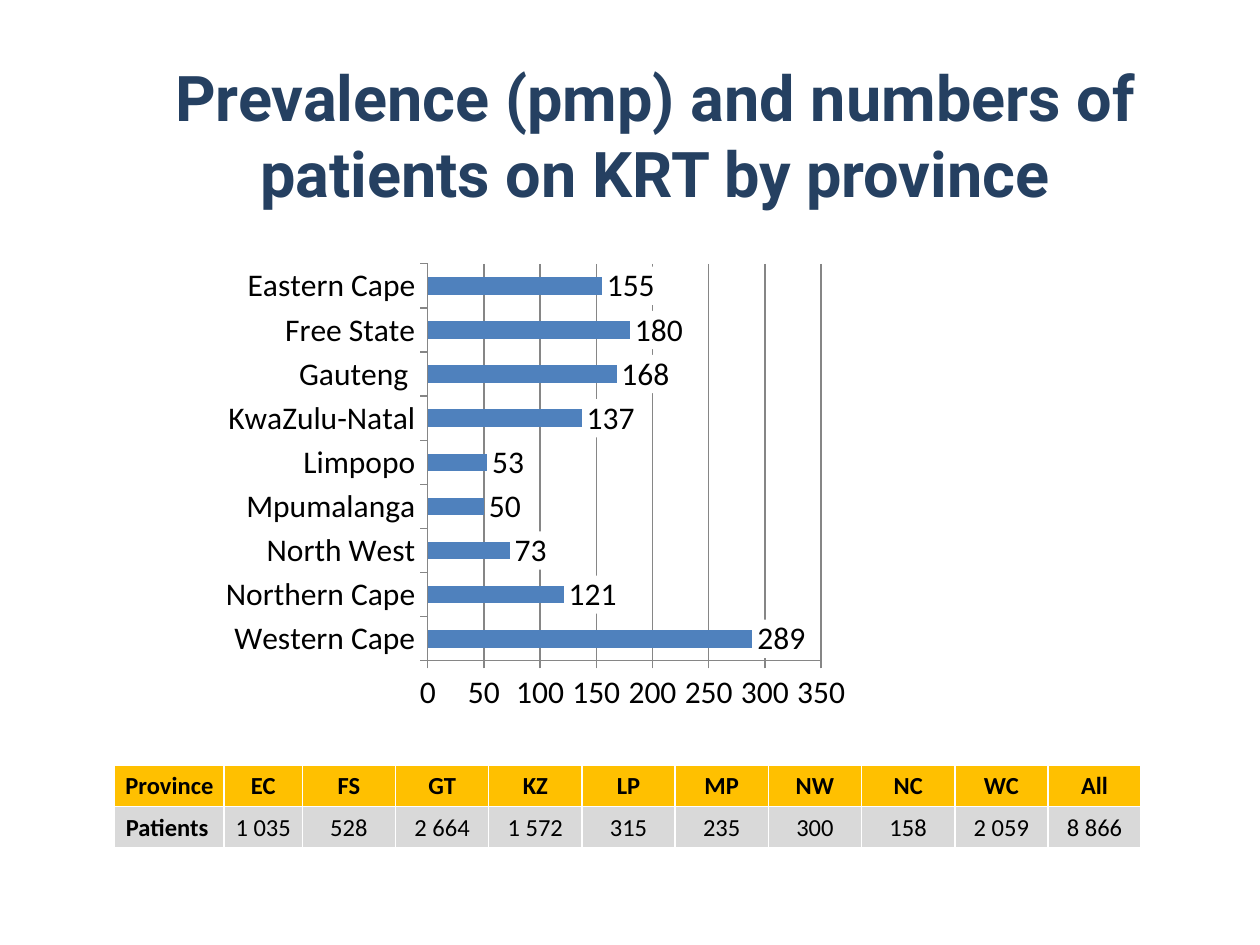
from lxml import etree
from pptx import Presentation
from pptx.chart.data import CategoryChartData
from pptx.dml.color import RGBColor
from pptx.enum.chart import XL_CHART_TYPE, XL_LABEL_POSITION, XL_TICK_MARK
from pptx.enum.text import MSO_ANCHOR, PP_ALIGN
from pptx.oxml import parse_xml
from pptx.oxml.ns import nsdecls, qn
from pptx.util import Inches, Pt

NAVY = RGBColor(0x25, 0x40, 0x61)
BLUE = RGBColor(0x4F, 0x81, 0xBD)
GOLD = RGBColor(0xFF, 0xC0, 0x00)
LIGHT_GREY = RGBColor(0xD9, 0xD9, 0xD9)
AXIS_GREY = RGBColor(0x86, 0x86, 0x86)
BLACK = RGBColor(0, 0, 0)
WHITE = RGBColor(0xFF, 0xFF, 0xFF)


def set_font(font, name, size, color, bold=False):
    font.name, font.size, font.bold = name, Pt(size), bold
    font.color.rgb = color


def set_borders(cell, color, width):
    """Line all four sides of a table cell; the lines must precede its fill."""
    tcPr = cell._tc.get_or_add_tcPr()
    for i, side in enumerate(("lnL", "lnR", "lnT", "lnB")):
        ln = parse_xml(
            f'<a:{side} {nsdecls("a")} w="{Pt(width)}"><a:solidFill>'
            f'<a:srgbClr val="{color}"/></a:solidFill></a:{side}>')
        tcPr.insert(i, ln)


prs = Presentation()
prs.slide_width, prs.slide_height = Inches(10), Inches(7.5)
s = prs.slides.add_slide(prs.slide_layouts[6])

# Title
title = s.shapes.add_textbox(Inches(0.75), Inches(0.44), Inches(8.9), Inches(1.25))
tf = title.text_frame
tf.word_wrap = True
tf.vertical_anchor = MSO_ANCHOR.MIDDLE
p = tf.paragraphs[0]
p.alignment = PP_ALIGN.CENTER
r = p.add_run()
r.text = "Prevalence (pmp) and numbers of patients on KRT by province"
set_font(r.font, "Roboto", 36, NAVY, bold=True)

# Prevalence chart, listed from the bottom bar up
prevalence = {
    "Western Cape": 289, "Northern Cape": 121, "North West": 73,
    "Mpumalanga": 50, "Limpopo": 53, "KwaZulu-Natal": 137,
    "Gauteng ": 168, "Free State": 180, "Eastern Cape": 155,
}
data = CategoryChartData()
data.categories = list(prevalence)
data.add_series("Series 1", list(prevalence.values()))
chart = s.shapes.add_chart(
    XL_CHART_TYPE.BAR_CLUSTERED, Inches(1.69), Inches(2.02),
    Inches(5.12), Inches(3.7), data).chart
set_font(chart.font, "Calibri", 18, BLACK)
chart.has_legend = False
chart.has_title = False

plot = chart.plots[0]
plot.gap_width = 150
plot.vary_by_categories = False
fill = plot.series[0].format.fill
fill.solid()
fill.fore_color.rgb = BLUE

plot.has_data_labels = True
labels = plot.data_labels
labels.show_value = True
labels.number_format = "0"
labels.number_format_is_linked = False
labels.position = XL_LABEL_POSITION.OUTSIDE_END
# White label boxes interrupt the gridlines
label_box = etree.fromstring(
    f'<c:spPr {nsdecls("c", "a")}><a:solidFill>'
    f'<a:srgbClr val="{WHITE}"/></a:solidFill></c:spPr>')
labels._element.find(qn("c:numFmt")).addnext(label_box)

for axis in (chart.category_axis, chart.value_axis):
    axis.major_tick_mark = XL_TICK_MARK.OUTSIDE
    axis.minor_tick_mark = XL_TICK_MARK.NONE
    axis.format.line.color.rgb = AXIS_GREY
    axis.format.line.width = Pt(0.75)
value_axis = chart.value_axis
axis_format = {"minimum_scale": 0, "maximum_scale": 350, "major_unit": 50,
               "has_major_gridlines": True}
for name, value in axis_format.items():
    setattr(value_axis, name, value)
value_axis.tick_labels.number_format = "0"
value_axis.tick_labels.number_format_is_linked = False
grid = value_axis.major_gridlines.format.line
grid.color.rgb = AXIS_GREY
grid.width = Pt(0.75)

# Patient numbers
rows = [
    ["Province", "EC", "FS", "GT", "KZ", "LP", "MP", "NW", "NC", "WC", "All"],
    ["Patients", "1 035", "528", "2 664", "1 572", "315", "235", "300", "158",
     "2 059", "8 866"],
]
widths = [0.87, 0.62] + [0.74] * 9
row_height = 0.33
cell_format = {
    "vertical_anchor": MSO_ANCHOR.MIDDLE, "margin_left": Inches(0.01),
    "margin_right": Inches(0.01), "margin_top": Inches(0.01), "margin_bottom": 0,
}
table = s.shapes.add_table(
    len(rows), len(widths), Inches(0.91), Inches(6.07),
    Inches(sum(widths)), Inches(row_height * len(rows))).table
for column, width in zip(table.columns, widths):
    column.width = Inches(width)
for i, (row, color) in enumerate(zip(rows, (GOLD, LIGHT_GREY))):
    table.rows[i].height = Inches(row_height)
    for j, text in enumerate(row):
        cell = table.cell(i, j)
        for name, value in cell_format.items():
            setattr(cell, name, value)
        cell.fill.solid()
        cell.fill.fore_color.rgb = color
        set_borders(cell, WHITE, 1)
        p = cell.text_frame.paragraphs[0]
        p.alignment = PP_ALIGN.CENTER
        r = p.add_run()
        r.text = text
        set_font(r.font, "Calibri", 14, BLACK, bold=i == 0 or j == 0)

row_label = table.cell(1, 0)
row_label.margin_left = Inches(0.09)
row_label.text_frame.paragraphs[0].alignment = PP_ALIGN.LEFT

prs.save("out.pptx")
